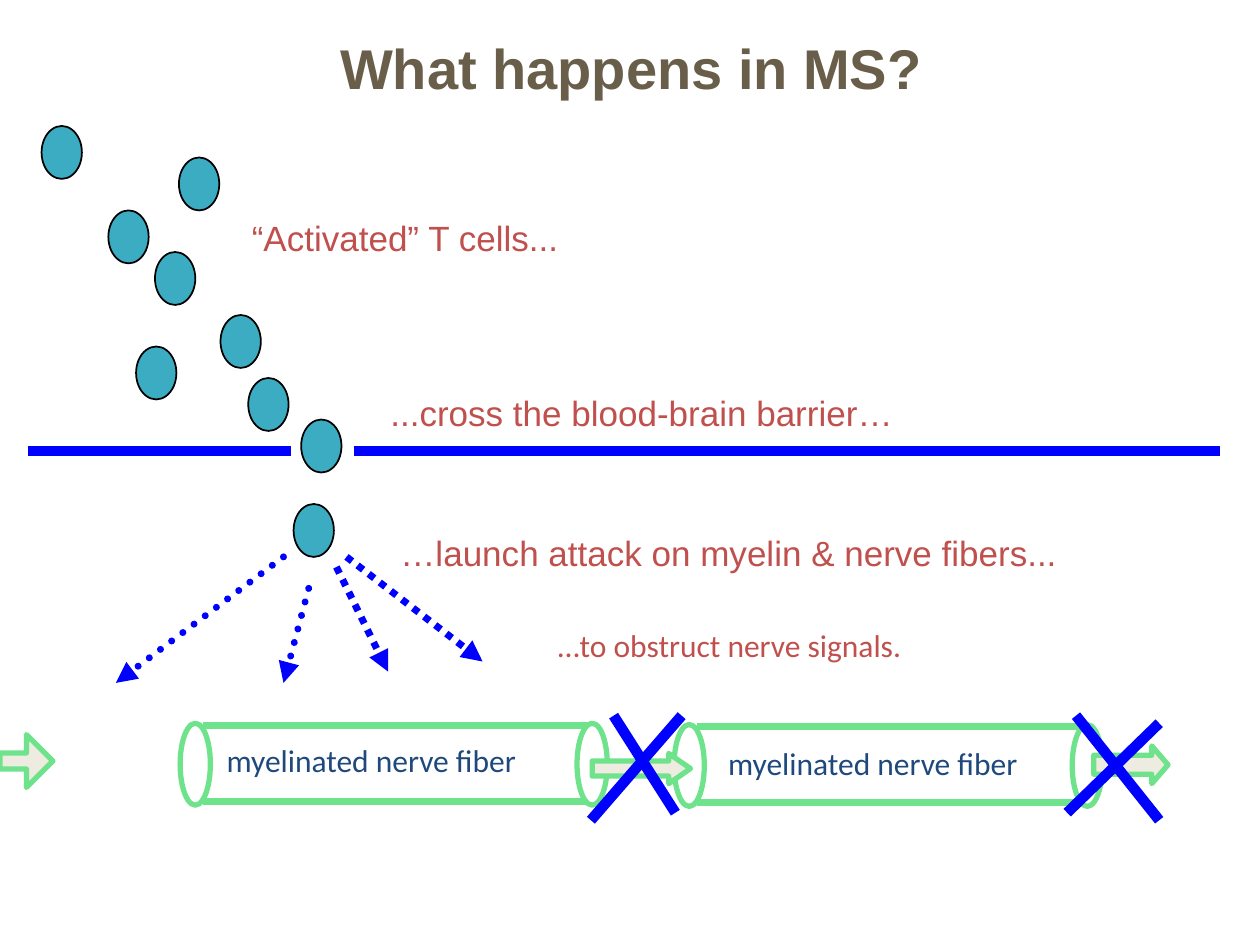
"""Builds a slide on how T cells attack nerve fibers in MS."""
from dataclasses import dataclass

from pptx import Presentation
from pptx.dml.color import RGBColor
from pptx.enum.dml import MSO_LINE as Dash
from pptx.enum.shapes import MSO_CONNECTOR as Conn, MSO_SHAPE as Kind
from pptx.enum.text import MSO_ANCHOR as Anchor, PP_ALIGN as Align
from pptx.oxml.ns import qn
from pptx.util import Inches, Pt
from lxml.etree import SubElement

BLUE = RGBColor(0x00, 0x00, 0xFF)
GREEN = RGBColor(0x6F, 0xE3, 0x8B)
TEAL = RGBColor(0x3C, 0xAC, 0xC2)
CREAM = RGBColor(0xEE, 0xEC, 0xE1)
BLACK = RGBColor(0x00, 0x00, 0x00)
BROWN = RGBColor(0x69, 0x5E, 0x4A)
RED = RGBColor(0xC0, 0x50, 0x4D)
NAVY = RGBColor(0x1F, 0x49, 0x7D)


@dataclass
class Label:
    text: str
    box: tuple
    size: int = 20
    face: str = "Arial"
    color: RGBColor = RED
    bold: bool = False
    align: Align = Align.LEFT
    anchor: Anchor = Anchor.TOP


@dataclass
class Stroke:
    start: tuple
    end: tuple
    color: RGBColor = BLUE
    width: float = 6


@dataclass
class Ray:
    start: tuple
    end: tuple
    cap: str


@dataclass
class Fiber:
    left: float
    right: float
    top: float
    label: Label


@dataclass
class Signal:
    box: tuple
    shaft: float
    head: float


LABELS = [
    Label("What happens in MS?", (0.22, 0.03, 9.58, 1), 32, color=BROWN,
          bold=True, align=Align.CENTER, anchor=Anchor.MIDDLE),
    Label("“Activated” T cells...", (1.9, 1.67, 3.5, 0.43)),
    Label("...cross the blood-brain barrier…", (3, 3.06, 5.79, 0.43)),
    Label("…launch attack on myelin & nerve fibers...",
          (3.08, 4.17, 6.92, 0.43)),
    Label("…to obstruct nerve signals.", (4.33, 4.92, 4.5, 0.43), 18,
          "Calibri"),
]
WALL = [Stroke((0.22, 3.58), (2.31, 3.58)), Stroke((2.81, 3.58), (9.68, 3.58))]
RAYS = [
    Ray((2.45, 4.67), (2.25, 5.42), "rnd"),
    Ray((2.67, 4.5), (3.08, 5.33), "flat"),
    Ray((2.25, 4.42), (0.92, 5.42), "rnd"),
    Ray((2.75, 4.42), (3.83, 5.25), "flat"),
]
CELLS = [(2.39, 3.33), (0.33, 1), (1.42, 1.25), (0.86, 1.67), (1.23, 2),
         (1.08, 2.75), (1.75, 2.5), (1.97, 3), (2.33, 4)]
NERVE = "myelinated nerve fiber"
FIBERS = [
    Fiber(1.43, 4.58, 5.74,
          Label(NERVE, (1.7, 5.83, 2.77, 0.4), 18, "Calibri", NAVY)),
    Fiber(5.35, 8.51, 5.75,
          Label(NERVE, (5.68, 5.86, 2.99, 0.4), 18, "Calibri", NAVY)),
]
SIGNALS = [
    Signal((0, 5.83, 0.42, 0.42), 0.3, 0.5),
    Signal((4.7, 5.98, 0.78, 0.24), 0.5, 0.72),
    Signal((8.68, 5.92, 0.59, 0.3), 0.5, 0.43),
]
BLOCKS = [
    Stroke((5.41, 5.68), (4.69, 6.51)),
    Stroke((4.87, 5.68), (5.36, 6.45)),
    Stroke((9.2, 5.74), (8.47, 6.45)),
    Stroke((8.54, 5.68), (9.2, 6.51)),
]


def write(slide, label: Label) -> None:
    """Add one text label."""
    frame = slide.shapes.add_textbox(*map(Inches, label.box)).text_frame
    frame.word_wrap = True
    frame.vertical_anchor = label.anchor
    para = frame.paragraphs[0]
    para.alignment = label.align
    run = para.add_run()
    run.text = label.text
    style = {"name": label.face, "size": Pt(label.size), "bold": label.bold}
    for key, value in style.items():
        setattr(run.font, key, value)
    run.font.color.rgb = label.color


def draw(slide, stroke: Stroke):
    """Add one straight line and return it."""
    line = slide.shapes.add_connector(
        Conn.STRAIGHT, *map(Inches, stroke.start + stroke.end))
    line.line.color.rgb = stroke.color
    line.line.width = Pt(stroke.width)
    SubElement(line._element.spPr, qn("a:effectLst"))
    return line


def shoot(slide, ray: Ray) -> None:
    """Add one dotted arrow."""
    line = draw(slide, Stroke(ray.start, ray.end, width=4))
    line.line.dash_style = Dash.ROUND_DOT
    edge = line.line._get_or_add_ln()
    edge.set("cap", ray.cap)
    SubElement(edge, qn("a:tailEnd"), type="triangle")


def form(slide, kind: Kind, box: tuple, fill, edge: RGBColor, width: float):
    """Add one outlined shape and return it."""
    shape = slide.shapes.add_shape(kind, *map(Inches, box))
    shape.shadow.inherit = False
    if fill is None:
        shape.fill.background()
    else:
        shape.fill.solid()
        shape.fill.fore_color.rgb = fill
    shape.line.color.rgb = edge
    shape.line.width = Pt(width)
    return shape


def lay(slide, fiber: Fiber) -> None:
    """Add one nerve fiber as a tube with its label."""
    write(slide, fiber.label)
    for left in (fiber.left, fiber.right):
        form(slide, Kind.OVAL, (left, fiber.top, 0.24, 0.65), None, GREEN, 3)
    for drop in (0.02, 0.62):
        y = fiber.top + drop
        draw(slide, Stroke((fiber.left + 0.18, y), (fiber.right + 0.08, y),
                           GREEN, 4))


def point(slide, sign: Signal) -> None:
    """Add one block arrow for a nerve signal."""
    arrow = form(slide, Kind.RIGHT_ARROW, sign.box, CREAM, GREEN, 3)
    arrow.adjustments[0] = sign.shaft
    arrow.adjustments[1] = sign.head


def main() -> None:
    """Build and save the slide."""
    deck = Presentation()
    deck.slide_width, deck.slide_height = Inches(10), Inches(7.5)
    slide = deck.slides.add_slide(deck.slide_layouts[6])
    for label in LABELS:
        write(slide, label)
    for part in WALL:
        draw(slide, part)
    for ray in RAYS:
        shoot(slide, ray)
    for spot in CELLS:
        form(slide, Kind.OVAL, spot + (0.32, 0.42), TEAL, BLACK, 1)
    for fiber in FIBERS:
        lay(slide, fiber)
    for sign in SIGNALS:
        point(slide, sign)
    for part in BLOCKS:
        draw(slide, part)
    deck.save("out.pptx")


if __name__ == "__main__":
    main()
